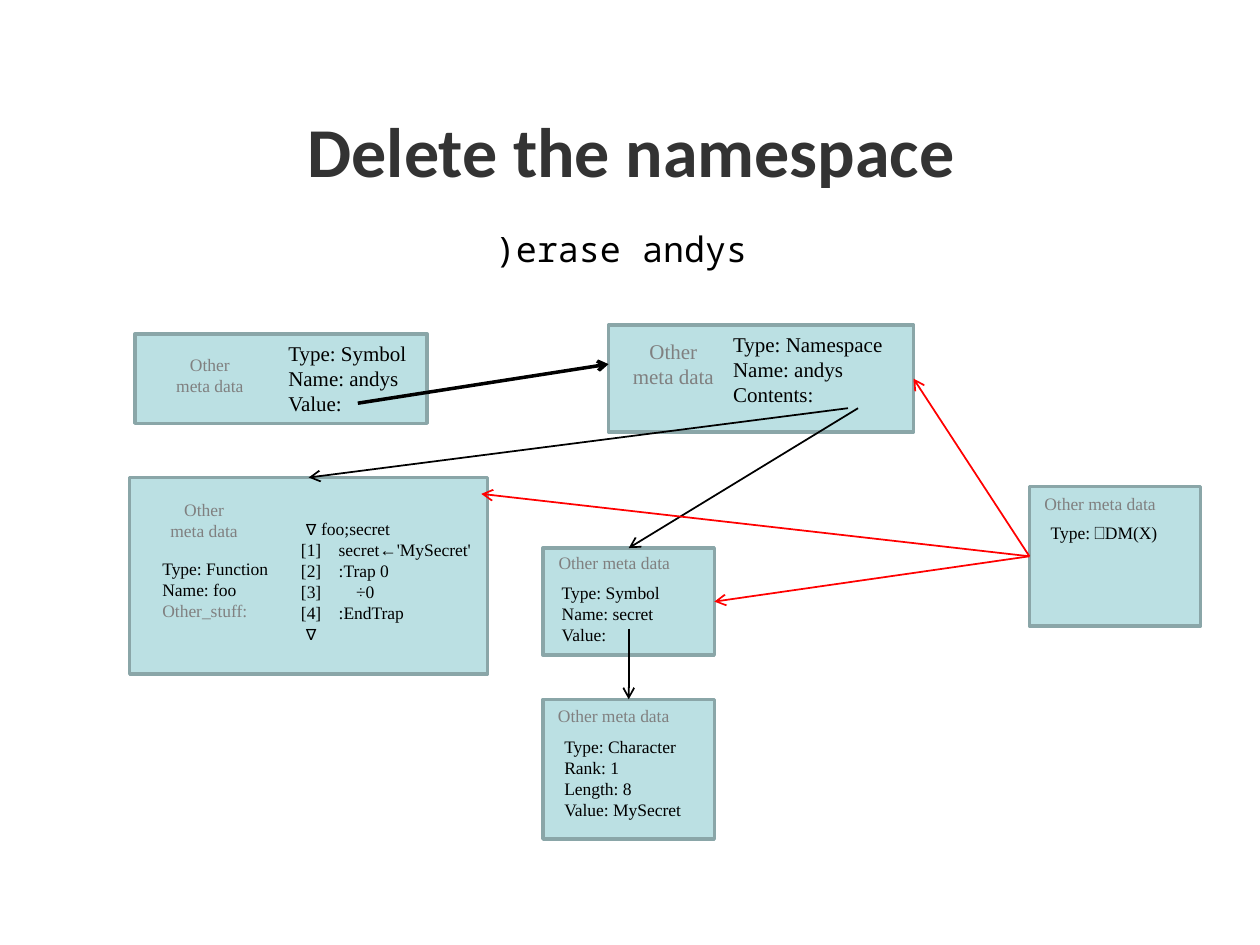
from pptx import Presentation
from pptx.dml.color import RGBColor
from pptx.enum.shapes import MSO_CONNECTOR, MSO_SHAPE
from pptx.enum.text import MSO_ANCHOR, PP_ALIGN
from pptx.oxml.ns import qn
from pptx.util import Inches, Pt
from lxml import etree

RECT, STRAIGHT = MSO_SHAPE.RECTANGLE, MSO_CONNECTOR.STRAIGHT
LEFT, CENTER = PP_ALIGN.LEFT, PP_ALIGN.CENTER
TOP, MIDDLE = MSO_ANCHOR.TOP, MSO_ANCHOR.MIDDLE
BLACK, GRAY, RED = "000000", "808080", "FF0000"
FILL, BORDER = "BBE0E3", "8AA6A8"
SERIF = "Times New Roman"
SIDE_TOP, SIDE_LEFT, SIDE_RIGHT = 0, 1, 3

# Memory blocks: left, top, width, height
BLOCKS = {
    "function": (1.03, 3.79, 2.84, 1.56),
    "symbol": (1.07, 2.65, 2.32, 0.71),
    "namespace": (4.83, 2.58, 2.42, 0.85),
    "secret": (4.31, 4.35, 1.36, 0.85),
    "value": (4.31, 5.55, 1.36, 1.11),
    "dm": (8.17, 3.86, 1.36, 1.11),
}

# Gray centred captions: position, size, lines
CAPTIONS = [
    ((1.1, 3.91, 1.04, 0.44), 10, ["Other", "meta data"]),
    ((1.07, 2.76, 1.19, 0.44), 10, ["Other", "meta data"]),
    ((4.83, 2.64, 1.03, 0.5), 12, ["Other", "meta data"]),
    ((4.31, 4.33, 1.13, 0.27), 10, ["Other meta data"]),
    ((4.28, 5.55, 1.18, 0.27), 10, ["Other meta data"]),
    ((8.14, 3.86, 1.18, 0.27), 10, ["Other meta data"]),
]

# Block contents: position, size, lines
DETAILS = [
    ((1.19, 4.38, 1.05, 0.61), 10, ["Type: Function", "Name: foo", "Other_stuff:"]),
    ((2.19, 2.65, 1.2, 0.71), 12, ["Type: Symbol", "Name: andys", "Value:"]),
    ((5.72, 2.58, 1.85, 0.71), 12, ["Type: Namespace", "Name: andys", "Contents:"]),
    ((2.29, 4.06, 1.65, 1.11), 10,
     [" ∇ foo;secret", "[1]    secret←'MySecret'", "[2]    :Trap 0",
      "[3]        ÷0", "[4]    :EndTrap", " ∇"]),
    ((4.36, 4.57, 1.18, 0.61), 10, ["Type: Symbol", "Name: secret", "Value:"]),
    ((4.38, 5.79, 1.18, 0.77), 10,
     ["Type: Character", "Rank: 1", "Length: 8", "Value: MySecret"]),
    ((8.24, 4.09, 1.18, 0.27), 10, ["Type: ⎕DM(X)"]),
]
MUTED_LINES = {"Other_stuff:"}

# Arrows: start, end, colour, width; an end is a point or a (block, side) pair
ARROWS = [
    ((2.84, 3.2), (4.83, 2.89), BLACK, 2),
    ((6.73, 3.24), ("function", SIDE_TOP), BLACK, 1),
    ((6.81, 3.24), ("secret", SIDE_TOP), BLACK, 1),
    ((4.99, 4.99), ("value", SIDE_TOP), BLACK, 1),
    (("dm", SIDE_LEFT), ("namespace", SIDE_RIGHT), RED, 1),
    (("dm", SIDE_LEFT), (3.82, 3.92), RED, 1),
    (("dm", SIDE_LEFT), ("secret", SIDE_RIGHT), RED, 1),
]


def rgb(color):
    return RGBColor.from_string(color)


def add_text(s, box, lines, size, color, align=LEFT, font=SERIF, bold=False, anchor=TOP):
    tf = s.shapes.add_textbox(*map(Inches, box)).text_frame
    tf.word_wrap = True
    tf.vertical_anchor = anchor
    tf.text = "\n".join(lines)
    for p in tf.paragraphs:
        p.alignment = align
        for r in p.runs:
            r.font.name, r.font.size, r.font.bold = font, Pt(size), bold
            r.font.color.rgb = rgb(GRAY if r.text in MUTED_LINES else color)


def add_block(s, box):
    sp = s.shapes.add_shape(RECT, *map(Inches, box))
    sp.shadow.inherit = False
    sp.fill.solid()
    sp.fill.fore_color.rgb = rgb(FILL)
    sp.line.color.rgb = rgb(BORDER)
    sp.line.width = Pt(2)
    return sp


def add_arrow(s, blocks, start, end, color, width):
    points = [(0, 0) if e[0] in blocks else e for e in (start, end)]
    cx = s.shapes.add_connector(STRAIGHT, *(Inches(v) for pt in points for v in pt))
    for target, connect in ((start, cx.begin_connect), (end, cx.end_connect)):
        if target[0] in blocks:
            connect(blocks[target[0]], target[1])
    cx.line.color.rgb = rgb(color)
    cx.line.width = Pt(width)
    ln = cx.line._get_or_add_ln()
    etree.SubElement(ln, qn("a:tailEnd"), type="arrow")
    etree.SubElement(cx._element.spPr, qn("a:effectLst"))


def main():
    prs = Presentation()
    prs.slide_width, prs.slide_height = Inches(10), Inches(7.5)
    s = prs.slides.add_slide(prs.slide_layouts[6])

    # Heading and command
    add_text(s, (0.51, 0.76, 9, 0.86), ["Delete the namespace"], 40, "333333",
             CENTER, "Calibri", True, MIDDLE)
    add_text(s, (2.45, 1.76, 4.96, 0.44), [")erase andys"], 20, BLACK,
             CENTER, "Noto Sans Mono")

    # Blocks with their text
    blocks = {name: add_block(s, box) for name, box in BLOCKS.items()}
    for box, size, lines in CAPTIONS:
        add_text(s, box, lines, size, GRAY, CENTER)
    for box, size, lines in DETAILS:
        add_text(s, box, lines, size, BLACK)

    # References between blocks
    for arrow in ARROWS:
        add_arrow(s, blocks, *arrow)

    prs.save("out.pptx")


if __name__ == "__main__":
    main()
